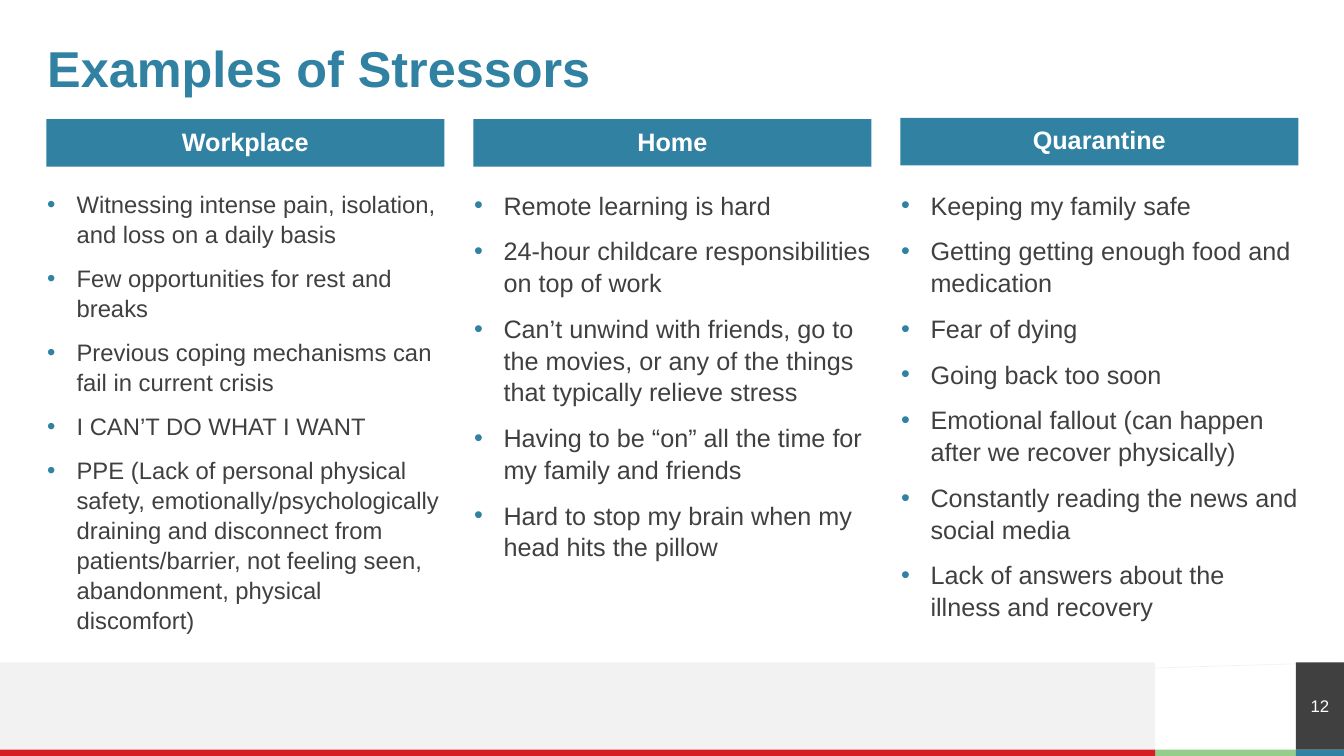
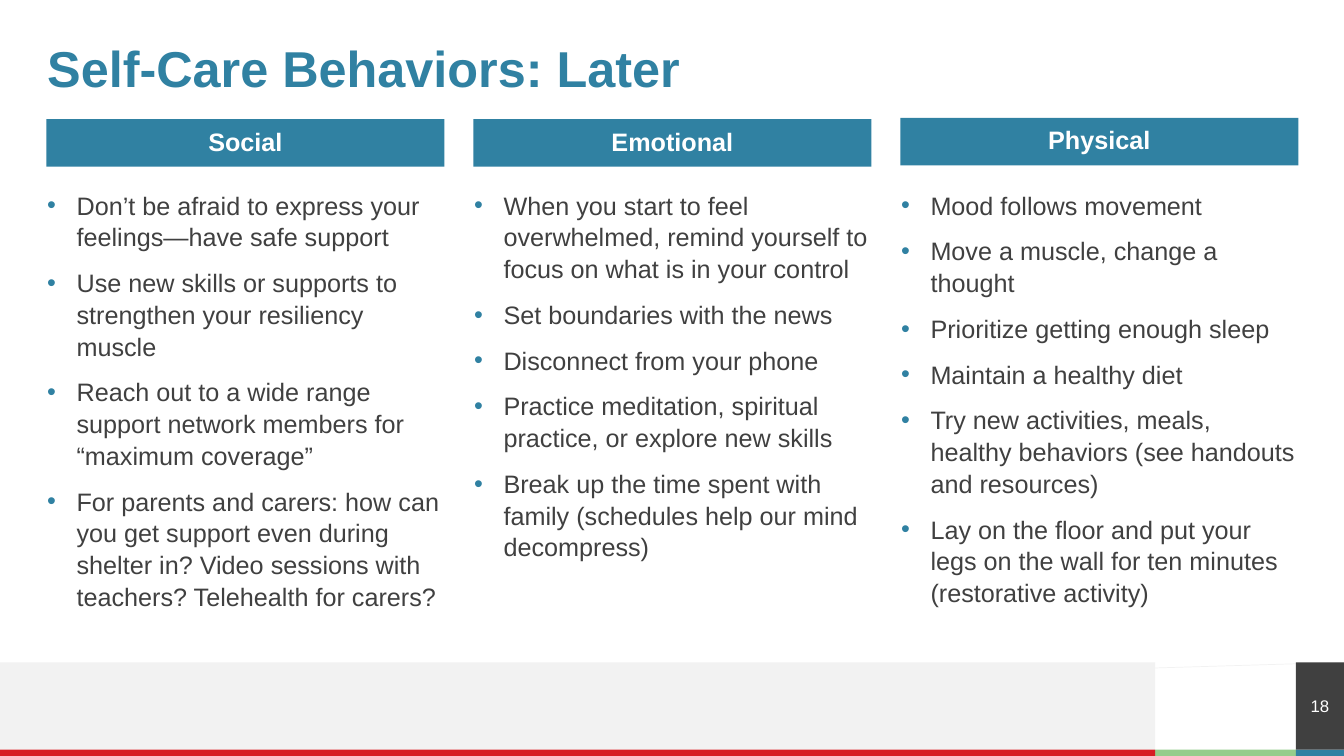
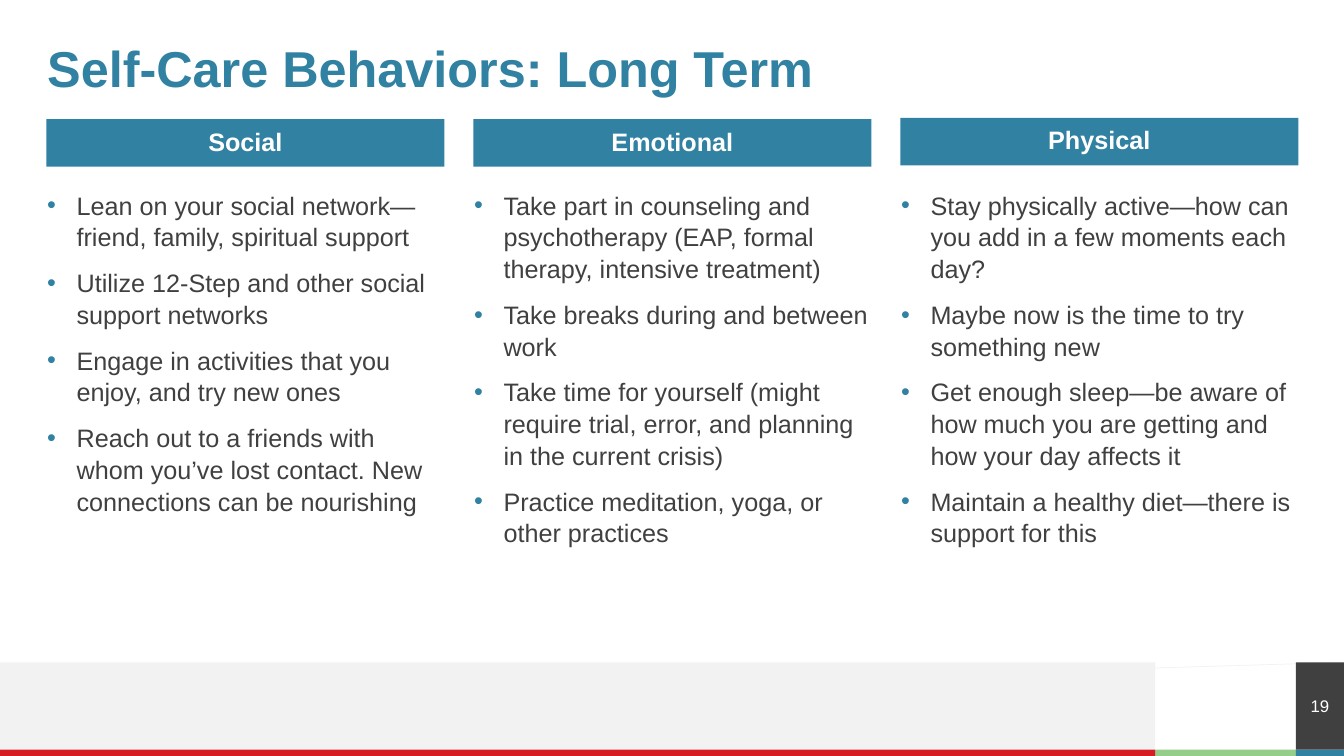
"""Build three slides comparing stressors and self-care behaviors in columns."""
from dataclasses import dataclass

from lxml.etree import SubElement
from pptx import Presentation
from pptx.dml.color import RGBColor
from pptx.enum.shapes import MSO_CONNECTOR as Connector, MSO_SHAPE as Preset
from pptx.enum.text import MSO_ANCHOR as Anchor, MSO_AUTO_SIZE as AutoSize, PP_ALIGN as Align
from pptx.oxml.ns import qn
from pptx.util import Cm, Pt


@dataclass(frozen=True)
class Theme:
    font: str = "Arial"
    blue: str = "3081A2"
    green: str = "95CD8B"
    red: str = "D71D24"
    pale: str = "F2F2F2"
    dark: str = "404040"
    white: str = "FFFFFF"
    title_size: int = 36
    text_size: int = 18
    dense_size: int = 17
    number_size: int = 12


@dataclass(frozen=True)
class Box:
    left: float
    top: float
    width: float
    height: float

    def lengths(self) -> tuple:
        return tuple(Cm(n) for n in (self.left, self.top, self.width, self.height))


@dataclass(frozen=True)
class Column:
    heading: str
    items: tuple[str, ...]
    size: int = Theme.text_size


@dataclass(frozen=True)
class Page:
    number: int
    title: str
    columns: tuple[Column, ...]


THEME = Theme()
WIDTH, HEIGHT = 33.87, 19.05
BAND_TOP, STRIP_TOP = 16.69, 18.89
BAND_RIGHT, TAB_LEFT = 29.11, 32.66
BAND_HEIGHT, STRIP_HEIGHT = STRIP_TOP - BAND_TOP, HEIGHT - STRIP_TOP
TITLE_BOX = Box(1.19, 1.19, 31.5, 1.19)
COLUMN_STEP = 10.76
HEADING_TOPS = (3.0, 3.0, 2.97)
BANDS = (
    (Box(BAND_RIGHT, STRIP_TOP, TAB_LEFT - BAND_RIGHT, STRIP_HEIGHT), THEME.green),
    (Box(0, BAND_TOP, BAND_RIGHT, BAND_HEIGHT), THEME.pale),
    (Box(0, STRIP_TOP, BAND_RIGHT, STRIP_HEIGHT), THEME.red),
    (Box(TAB_LEFT, STRIP_TOP, WIDTH - TAB_LEFT, STRIP_HEIGHT), THEME.blue),
)
NUMBER_BOX = Box(TAB_LEFT, BAND_TOP, WIDTH - TAB_LEFT, BAND_HEIGHT)

PAGES = (
    Page(12, "Examples of Stressors", (
        Column("Workplace", (
            "Witnessing intense pain, isolation, and loss on a daily basis",
            "Few opportunities for rest and breaks",
            "Previous coping mechanisms can fail in current crisis",
            "I CAN’T DO WHAT I WANT",
            "PPE (Lack of personal physical safety, emotionally/psychologically draining and "
            "disconnect from patients/barrier, not feeling seen, abandonment, physical discomfort)",
        ), THEME.dense_size),
        Column("Home", (
            "Remote learning is hard",
            "24-hour childcare responsibilities on top of work",
            "Can’t unwind with friends, go to the movies, or any of the things that typically "
            "relieve stress",
            "Having to be “on” all the time for my family and friends",
            "Hard to stop my brain when my head hits the pillow",
        )),
        Column("Quarantine", (
            "Keeping my family safe",
            "Getting getting enough food and medication",
            "Fear of dying",
            "Going back too soon",
            "Emotional fallout (can happen after we recover physically)",
            "Constantly reading the news and social media",
            "Lack of answers about the illness and recovery",
        )),
    )),
    Page(18, "Self-Care Behaviors: Later", (
        Column("Social", (
            "Don’t be afraid to express your feelings—have safe support",
            "Use new skills or supports to strengthen your resiliency muscle",
            "Reach out to a wide range support network members for “maximum coverage”",
            "For parents and carers: how can you get support even during shelter in? "
            "Video sessions with teachers? Telehealth for carers?",
        )),
        Column("Emotional", (
            "When you start to feel overwhelmed, remind yourself to focus on what is in your control",
            "Set boundaries with the news",
            "Disconnect from your phone",
            "Practice meditation, spiritual practice, or explore new skills",
            "Break up the time spent with family (schedules help our mind decompress)",
        )),
        Column("Physical", (
            "Mood follows movement",
            "Move a muscle, change a thought",
            "Prioritize getting enough sleep",
            "Maintain a healthy diet",
            "Try new activities, meals, healthy behaviors (see handouts and resources)",
            "Lay on the floor and put your legs on the wall for ten minutes (restorative activity)",
        )),
    )),
    Page(19, "Self-Care Behaviors: Long Term", (
        Column("Social", (
            "Lean on your social network— friend, family, spiritual support",
            "Utilize 12-Step and other social support networks",
            "Engage in activities that you enjoy, and try new ones",
            "Reach out to a friends with whom you’ve lost contact. New connections can be nourishing",
        )),
        Column("Emotional", (
            "Take part in counseling and psychotherapy (EAP, formal therapy, intensive treatment)",
            "Take breaks during and between work",
            "Take time for yourself (might require trial, error, and planning in the current crisis)",
            "Practice meditation, yoga, or other practices",
        )),
        Column("Physical", (
            "Stay physically active—how can you add in a few moments each day?",
            "Maybe now is the time to try something new",
            "Get enough sleep—be aware of how much you are getting and how your day affects it",
            "Maintain a healthy diet—there is support for this",
        )),
    )),
)


def add_bullet(para) -> None:
    properties = para._p.get_or_add_pPr()
    properties.set("marL", str(Cm(0.74)))
    properties.set("indent", str(-Cm(0.74)))
    colour = SubElement(properties, qn("a:buClr"))
    SubElement(colour, qn("a:srgbClr"), val=THEME.blue)
    SubElement(properties, qn("a:buFont"), typeface=THEME.font)
    SubElement(properties, qn("a:buChar"), char="•")


def write(shape, *texts: str, size: int, colour: str, bold: bool = False,
          align: Align = Align.LEFT, anchor: Anchor = Anchor.MIDDLE,
          line: float = 1.0, before: float = 0, bullet: bool = False) -> None:
    frame = shape.text_frame
    frame.word_wrap = True
    frame.auto_size = AutoSize.NONE
    frame.vertical_anchor = anchor
    frame.margin_left = frame.margin_right = frame.margin_top = frame.margin_bottom = 0
    for index, text in enumerate(texts):
        para = frame.add_paragraph() if index else frame.paragraphs[0]
        if bullet:
            add_bullet(para)
        para.alignment = align
        para.line_spacing = line
        para.space_before = Pt(before if index else 0)
        span = para.add_run()
        span.text = text
        span.font.name = THEME.font
        span.font.size = Pt(size)
        span.font.bold = bold
        span.font.color.rgb = RGBColor.from_string(colour)


def place(shape, box: Box) -> None:
    shape.left, shape.top, shape.width, shape.height = box.lengths()


def add_block(slide, box: Box, colour: str):
    block = slide.shapes.add_shape(Preset.RECTANGLE, *box.lengths())
    block.shadow.inherit = False
    block.fill.solid()
    block.fill.fore_color.rgb = RGBColor.from_string(colour)
    block.line.fill.background()
    return block


def add_footer(slide, number: int) -> None:
    for box, colour in BANDS:
        add_block(slide, box, colour)
    rule = slide.shapes.add_connector(
        Connector.STRAIGHT, Cm(WIDTH), Cm(BAND_TOP), Cm(0), Cm(17.7))
    rule.line.color.rgb = RGBColor.from_string(THEME.pale)
    rule.line.width = Pt(0.5)
    SubElement(rule._element.spPr, qn("a:effectLst"))
    tab = add_block(slide, NUMBER_BOX, THEME.dark)
    write(tab, str(number), size=THEME.number_size, colour=THEME.white, align=Align.CENTER)


def add_column(slide, body, column: Column, index: int) -> None:
    offset = index * COLUMN_STEP
    heading = add_block(slide, Box(1.17 + offset, HEADING_TOPS[index], 10.03, 1.2), THEME.blue)
    write(heading, column.heading, size=THEME.text_size, colour=THEME.white, bold=True,
          align=Align.CENTER, line=0.9)
    place(body, Box(1.19 + offset, 4.75, 10.01, 10.8))
    write(body, *column.items, size=column.size, colour=THEME.dark, anchor=Anchor.TOP,
          line=1.05, before=10, bullet=True)


def add_page(deck, page: Page) -> None:
    slide = deck.slides.add_slide(deck.slide_layouts.get_by_name("Comparison"))
    title, *bodies = slide.placeholders
    add_footer(slide, page.number)
    place(title, TITLE_BOX)
    write(title, page.title, size=THEME.title_size, colour=THEME.blue, bold=True, line=0.9)
    for index, column in enumerate(page.columns):
        add_column(slide, bodies[index], column, index)
    for spare in bodies[len(page.columns):]:
        spare.element.getparent().remove(spare.element)


def main() -> None:
    deck = Presentation()
    deck.slide_width, deck.slide_height = Cm(WIDTH), Cm(HEIGHT)
    for page in PAGES:
        add_page(deck, page)
    deck.save("out.pptx")


if __name__ == "__main__":
    main()
